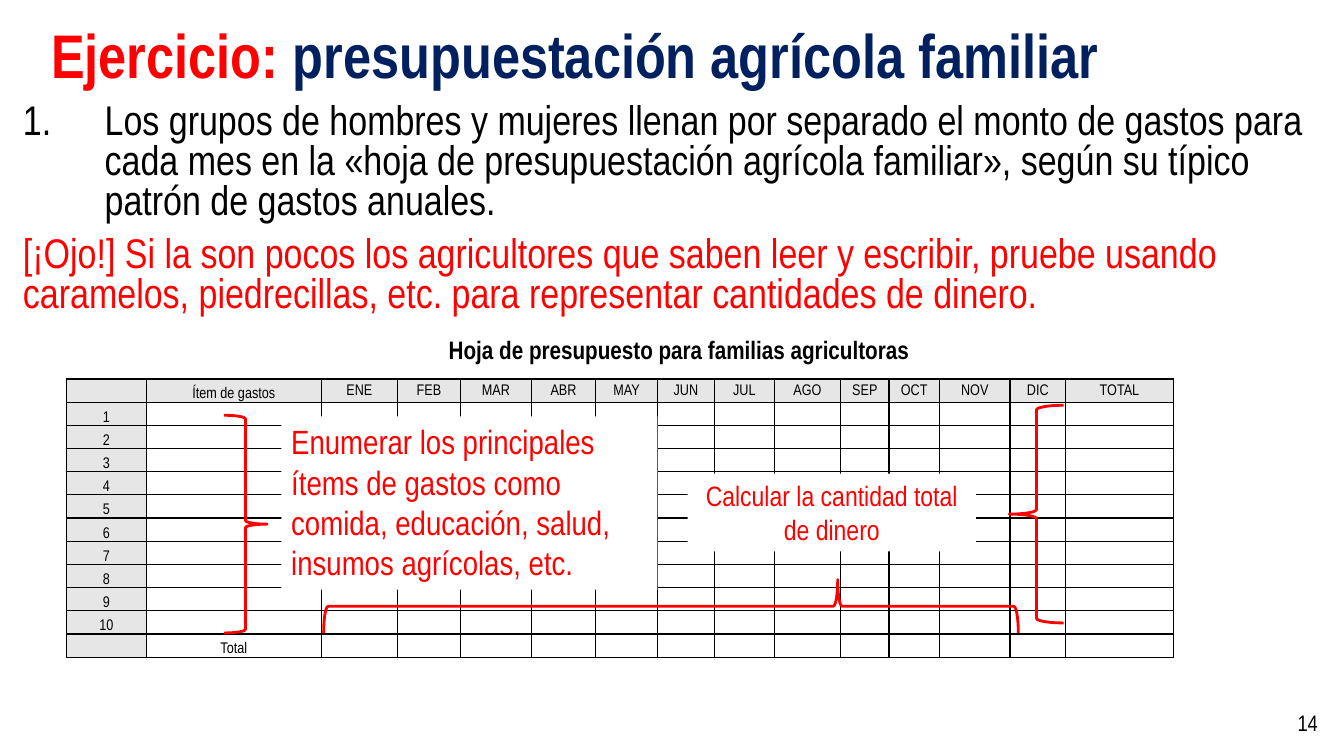
"""Build the slide on the family farm budgeting exercise."""
from lxml.etree import SubElement
from pptx import Presentation
from pptx.dml.color import RGBColor
from pptx.enum.shapes import MSO_SHAPE as Shape
from pptx.enum.text import MSO_ANCHOR as Anchor, MSO_AUTO_SIZE as AutoSize, PP_ALIGN as Align
from pptx.oxml.ns import qn
from pptx.util import Pt

PX = 9144
FONT = "Arial Narrow"
RED, BLACK, NAVY, WHITE, GRAY = "FF0000", "000000", "002060", "FFFFFF", "E7E6E6"


def color(value):
    return RGBColor.from_string(value)


def style(paragraph, size, ink, bold=False, align=Align.LEFT):
    paragraph.alignment = align
    paragraph.font.name = FONT
    paragraph.font.size = Pt(size)
    paragraph.font.bold = bold
    paragraph.font.color.rgb = color(ink)


presentation = Presentation()
presentation.slide_width = 1333 * PX
presentation.slide_height = 750 * PX
slide = presentation.slides.add_slide(presentation.slide_layouts[6])
shapes = slide.shapes

columns = [("", 79), ("Ítem de gastos", 174), ("ENE", 75), ("FEB", 63), ("MAR", 70),
           ("ABR", 64), ("MAY", 61), ("JUN", 57), ("JUL", 59), ("AGO", 66), ("SEP", 48),
           ("OCT", 50), ("NOV", 70), ("DIC", 55), ("TOTAL", 107)]
headers = [header for header, width in columns]
blanks = [""] * (len(columns) - 1)
rows = [headers]
rows += [[str(number)] + blanks for number in range(1, 11)]
rows.append(["", "Total"] + blanks[1:])

table = shapes.add_table(len(rows), len(columns), 66 * PX, 376 * PX, 1099 * PX, 276 * PX).table
table.first_row = False
table.horz_banding = False
for column, (header, width) in zip(table.columns, columns):
    column.width = width * PX
for row_index, texts in enumerate(rows):
    table.rows[row_index].height = 23 * PX
    for column_index, text in enumerate(texts):
        cell = table.cell(row_index, column_index)
        cell.margin_left = cell.margin_right = cell.margin_top = PX
        cell.margin_bottom = 0
        is_month = row_index == 0 and column_index > 1
        cell.vertical_anchor = Anchor.MIDDLE if is_month else Anchor.BOTTOM
        cell.text = text
        paragraph = cell.text_frame.paragraphs[0]
        style(paragraph, 11, BLACK, align=Align.CENTER)
        if not text:
            SubElement(paragraph._p, qn("a:endParaRPr"), sz="1100")
        properties = cell._tc.get_or_add_tcPr()
        for side in ("a:lnL", "a:lnR", "a:lnT", "a:lnB"):
            border = SubElement(properties, qn(side), w=str(Pt(1)))
            fill = SubElement(border, qn("a:solidFill"))
            SubElement(fill, qn("a:srgbClr"), val=BLACK)
        cell.fill.solid()
        is_label = row_index == 0 or column_index == 0
        cell.fill.fore_color.rgb = color(GRAY if is_label else WHITE)

title = shapes.add_textbox(41 * PX, -14 * PX, 1203 * PX, 145 * PX).text_frame
title.word_wrap = True
title.vertical_anchor = Anchor.MIDDLE
paragraph = title.paragraphs[0]
style(paragraph, 44, RED, bold=True)
paragraph.line_spacing = 0.9
for text, ink in [("Ejercicio: ", RED), ("presupuestación agrícola familiar", NAVY)]:
    run = paragraph.add_run()
    run.text = text
    run.font.color.rgb = color(ink)

body = shapes.add_textbox(13 * PX, 98 * PX, 1320 * PX, 244 * PX).text_frame
body.word_wrap = True
step, warning = body.paragraphs[0], body.add_paragraph()
step.text = ("Los grupos de hombres y mujeres llenan por separado el monto de gastos para cada mes "
             "en la «hoja de presupuestación agrícola familiar», según su típico patrón de gastos "
             "anuales.")
warning.text = ("[¡Ojo!] Si la son pocos los agricultores que saben leer y escribir, pruebe usando "
                "caramelos, piedrecillas, etc. para representar cantidades de dinero.")
for paragraph, ink in [(step, BLACK), (warning, RED)]:
    paragraph.line_spacing = 0.8
    paragraph.space_before = Pt(10)
    style(paragraph, 29.6, ink)
numbering = step._p.get_or_add_pPr()
numbering.set("marL", str(81 * PX))
numbering.set("indent", str(-81 * PX))
bullet = SubElement(numbering, qn("a:buAutoNum"), type="arabicPeriod")
numbering.find(qn("a:defRPr")).addprevious(bullet)

number_frame = shapes.add_textbox(1017 * PX, 697 * PX, 300 * PX, 40 * PX).text_frame
number_frame.word_wrap = True
number_frame.vertical_anchor = Anchor.MIDDLE
number_frame.text = "14"
style(number_frame.paragraphs[0], 16, BLACK, align=Align.RIGHT)

notes = [
    ("Calcular la cantidad total de dinero", 682, 470, 286, 77, 20, Align.CENTER),
    ("Enumerar los principales ítems de gastos como comida, educación, salud, "
     "insumos agrícolas, etc.", 279, 413, 373, 172, 24, Align.LEFT),
]
for text, left, top, width, height, size, align in notes:
    note = shapes.add_shape(Shape.RECTANGLE, left * PX, top * PX, width * PX, height * PX)
    note.shadow.inherit = False
    note.fill.solid()
    note.fill.fore_color.rgb = color(WHITE)
    note.line.fill.background()
    frame = note.text_frame
    frame.word_wrap = True
    frame.auto_size = AutoSize.SHAPE_TO_FIT_TEXT
    frame.vertical_anchor = Anchor.TOP
    frame.text = text
    style(frame.paragraphs[0], size, RED, align=align)

braces = [(222, 412, 43, 216, 0, 0.5), (1001, 402, 54, 216, 180, 0.5),
          (639, 257, 53, 689, 270, 0.74)]
for left, top, width, height, rotation, point in braces:
    brace = shapes.add_shape(Shape.RIGHT_BRACE, left * PX, top * PX, width * PX, height * PX)
    brace.shadow.inherit = False
    brace.rotation = rotation
    brace.adjustments[1] = point
    brace.fill.background()
    brace.line.color.rgb = color(RED)
    brace.line.width = Pt(2)

caption = shapes.add_textbox(337 * PX, 327 * PX, 673 * PX, 40 * PX).text_frame
caption.word_wrap = True
caption.auto_size = AutoSize.SHAPE_TO_FIT_TEXT
caption.text = "Hoja de presupuesto para familias agricultoras"
style(caption.paragraphs[0], 18, BLACK, bold=True, align=Align.CENTER)

presentation.save("out.pptx")
